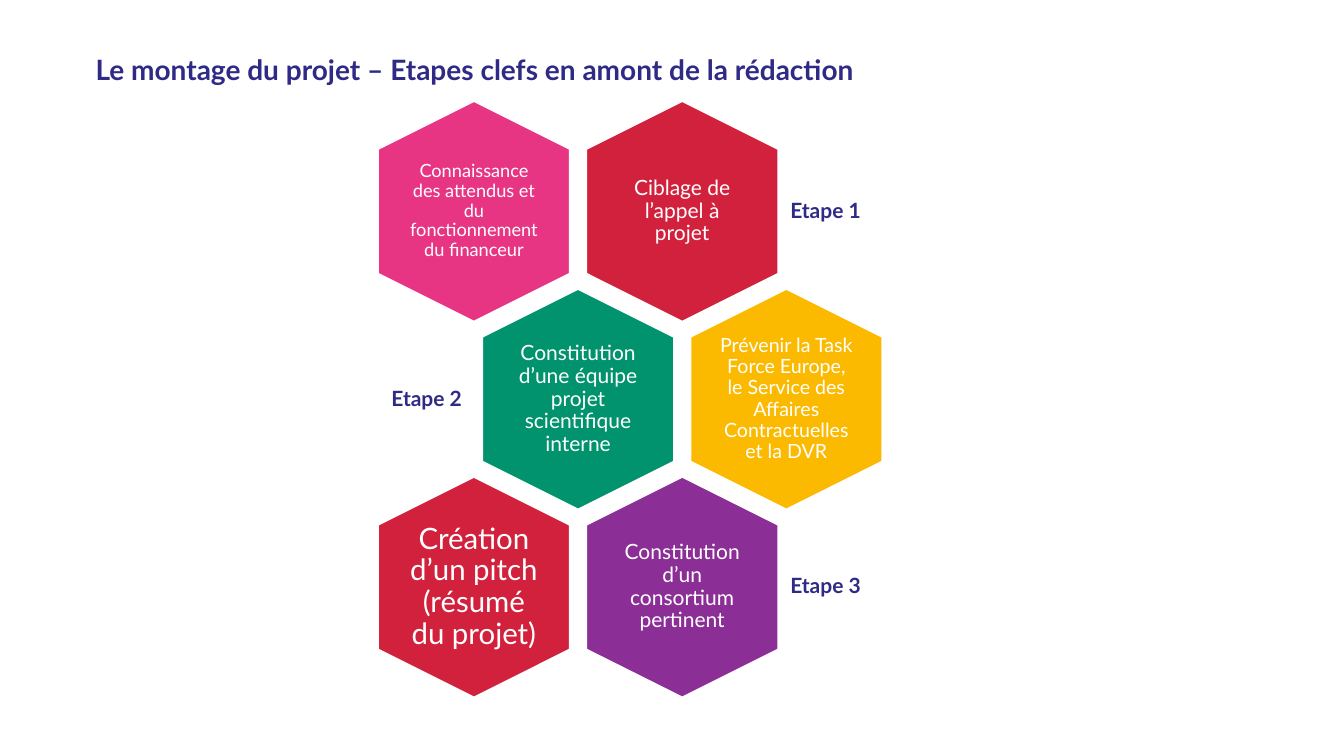
from pptx import Presentation
from pptx.dml.color import RGBColor
from pptx.enum.shapes import MSO_SHAPE
from pptx.enum.text import MSO_ANCHOR, PP_ALIGN
from pptx.util import Pt

NAVY = RGBColor(0x2F, 0x2A, 0x85)
WHITE = RGBColor(0xFF, 0xFF, 0xFF)
PINK = RGBColor(0xE8, 0x35, 0x83)
RED = RGBColor(0xD2, 0x21, 0x3C)
GREEN = RGBColor(0x00, 0x93, 0x6E)
YELLOW = RGBColor(0xFB, 0xBA, 0x00)
PURPLE = RGBColor(0x8B, 0x2F, 0x97)

FONT = "Lato"
LEFT, TOP = 338.5, 151  # centre of the first hexagon
STEP_X, STEP_Y = 148.8, 134.2
HEX_W, HEX_H = 158.4, 137.8  # before the quarter turn
TEXT_W, TEXT_H = 95, 108.8
TAG_W, TAG_H = 174, 95

# row, column (in steps), fill, text, size, inset
CELLS = [
    (0, 0, PINK, "Connaissance des attendus et du fonctionnement du financeur", 13, 0),
    (0, 1, RED, "Ciblage de l’appel à projet", 15, 4.5),
    (1, 0.5, GREEN, "Constitution d’une équipe projet scientifique interne", 15, 4.5),
    (1, 1.5, YELLOW, "Prévenir la Task Force Europe, le Service des Affaires "
     "Contractuelles et la DVR", 14, 0),
    (2, 0, RED, "Création d’un pitch (résumé du projet)", 21, 0),
    (2, 1, PURPLE, "Constitution d’un consortium pertinent", 15, 4.5),
]

# row, left edge, alignment, text
TAGS = [
    (0, 560, PP_ALIGN.LEFT, "Etape 1"),
    (1, 160.5, PP_ALIGN.RIGHT, "Etape 2"),
    (2, 560, PP_ALIGN.LEFT, "Etape 3"),
]


def add_text(slide, text, left, top, width, height, size=15, color=NAVY,
             bold=False, align=PP_ALIGN.LEFT, anchor=MSO_ANCHOR.MIDDLE,
             inset=4.5, spacing=0.9):
    box = slide.shapes.add_textbox(Pt(left), Pt(top), Pt(width), Pt(height))
    frame = box.text_frame
    frame.word_wrap = True
    frame.vertical_anchor = anchor
    frame.margin_left = frame.margin_right = Pt(inset)
    frame.margin_top = frame.margin_bottom = Pt(inset)
    para = frame.paragraphs[0]
    para.alignment = align
    para.line_spacing = spacing
    run = para.add_run()
    run.text = text
    font = run.font
    font.name, font.size, font.bold = FONT, Pt(size), bold
    font.color.rgb = color


def add_cell(slide, row, col, fill, text, size, inset):
    """Draw an upright hexagon with its text centred on it."""
    x, y = LEFT + col * STEP_X, TOP + row * STEP_Y
    shape = slide.shapes.add_shape(
        MSO_SHAPE.HEXAGON, Pt(x - HEX_W / 2), Pt(y - HEX_H / 2),
        Pt(HEX_W), Pt(HEX_H))
    shape.rotation = 90
    shape.shadow.inherit = False
    shape.fill.solid()
    shape.fill.fore_color.rgb = fill
    shape.line.color.rgb = WHITE
    shape.line.width = Pt(2)
    add_text(slide, text, x - TEXT_W / 2, y - TEXT_H / 2, TEXT_W, TEXT_H,
             size=size, color=WHITE, align=PP_ALIGN.CENTER, inset=inset)


def add_tag(slide, row, left, align, text):
    top = TOP + row * STEP_Y - TAG_H / 2
    add_text(slide, text, left, top, TAG_W, TAG_H, bold=True, align=align)


def main():
    deck = Presentation()
    deck.slide_width, deck.slide_height = Pt(960), Pt(540)
    slide = deck.slides.add_slide(deck.slide_layouts[6])
    add_text(slide, "Le montage du projet – Etapes clefs en amont de la rédaction",
             61.2, 30.2, 670, 62, size=20, bold=True,
             anchor=MSO_ANCHOR.TOP, inset=7.2, spacing=1)
    for cell in CELLS:
        add_cell(slide, *cell)
    for tag in TAGS:
        add_tag(slide, *tag)
    deck.save("out.pptx")


if __name__ == "__main__":
    main()
